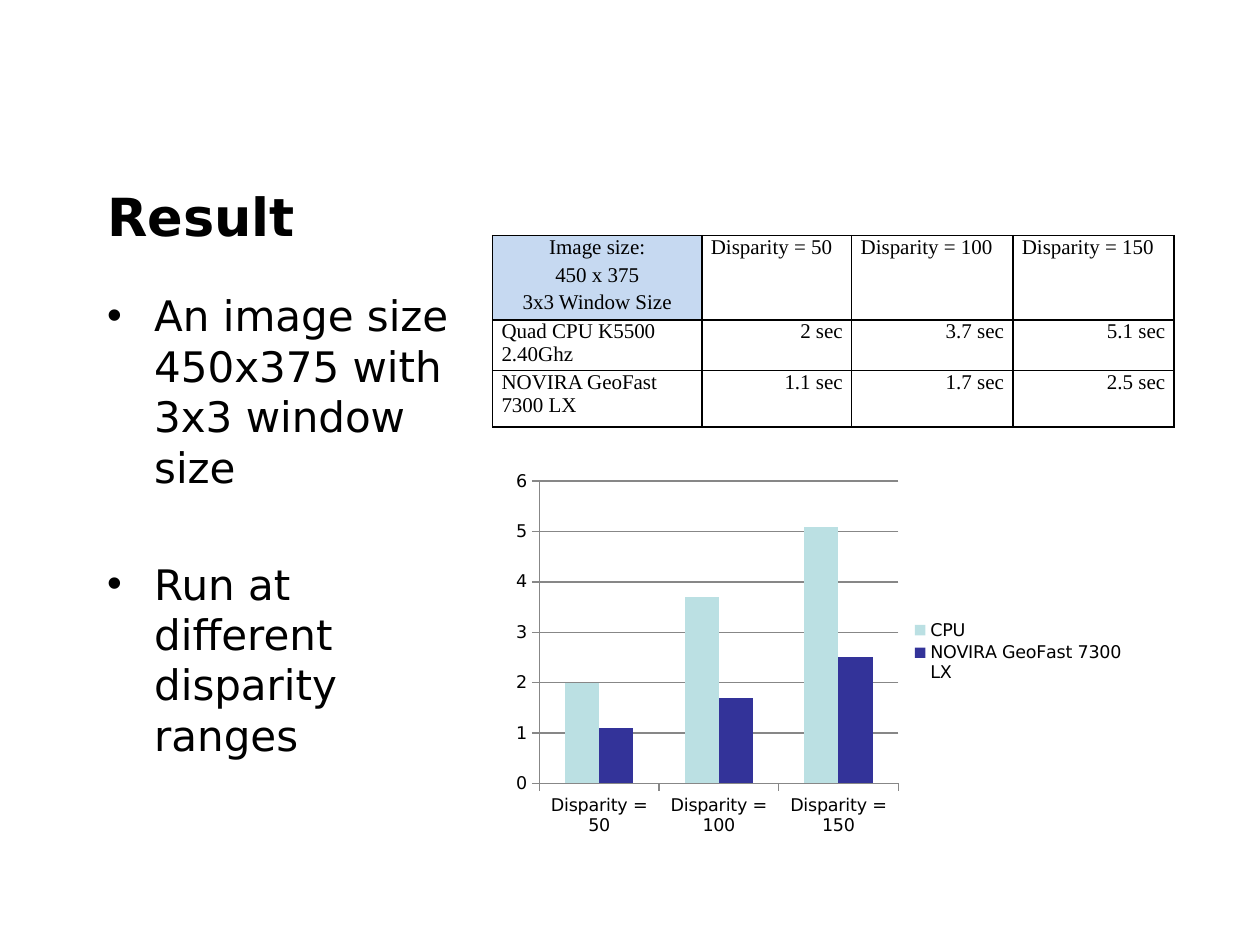
from lxml import etree
from pptx import Presentation
from pptx.chart.data import CategoryChartData
from pptx.dml.color import RGBColor
from pptx.enum.chart import XL_CHART_TYPE, XL_LEGEND_POSITION, XL_TICK_MARK
from pptx.enum.text import MSO_ANCHOR, MSO_AUTO_SIZE, PP_ALIGN
from pptx.oxml.ns import qn
from pptx.util import Cm, Pt

COLORS = {"text": "000000", "header": "C6D9F1", "grid": "878787",
          "cpu": "BBE0E3", "gpu": "333399"}
SANS = "DejaVu Sans"
SERIF = "Times New Roman"
GPU_NAME = "NOVIRA GeoFast 7300 LX"
DISPARITIES = ["Disparity = 50", "Disparity = 100", "Disparity = 150"]
HEADER_LINES = ["Image size:", "450 x 375", "3x3 Window Size"]
TIMINGS = {"Quad CPU K5500 2.40Ghz": [2, 3.7, 5.1], GPU_NAME: [1.1, 1.7, 2.5]}


def color(name):
    return RGBColor.from_string(COLORS[name])


def style_font(font, name, size, bold=False):
    font.name = name
    font.size = Pt(size)
    font.bold = bold
    font.color.rgb = color("text")


def add_run(paragraph, text, name, size, bold=False):
    run = paragraph.add_run()
    run.text = text
    style_font(run.font, name, size, bold)


def place_title(slide, left, top, width, height):
    title = slide.shapes.title
    title.left, title.top, title.width, title.height = left, top, width, height
    frame = title.text_frame
    frame.auto_size = MSO_AUTO_SIZE.NONE
    frame.vertical_anchor = MSO_ANCHOR.MIDDLE
    paragraph = frame.paragraphs[0]
    paragraph.alignment = PP_ALIGN.LEFT
    add_run(paragraph, "Result", SANS, 30, bold=True)


def add_bullets(slide, left, top, width, height):
    frame = slide.shapes.add_textbox(left, top, width, height).text_frame
    frame.word_wrap = True
    items = ["An image size 450x375 with 3x3 window size",
             "Run at different disparity ranges"]
    for index, item in enumerate(items):
        paragraph = frame.add_paragraph() if index else frame.paragraphs[0]
        properties = paragraph._p.get_or_add_pPr()
        properties.set("marL", str(Cm(0.95)))
        properties.set("indent", str(-Cm(0.95)))
        bullet_font = etree.SubElement(properties, qn("a:buFont"))
        bullet_font.set("typeface", "Arial")
        etree.SubElement(properties, qn("a:buChar")).set("char", "•")
        if index:
            paragraph.space_before = Pt(38)
        add_run(paragraph, item, SANS, 24)


def set_borders(cell, sides):
    """Draw black lines on the given sides of a cell and none on the others."""
    properties = cell._tc.get_or_add_tcPr()
    for side in "LRTB":
        line = etree.SubElement(properties, qn(f"a:ln{side}"), w=str(Pt(1)))
        if side in sides:
            fill = etree.SubElement(line, qn("a:solidFill"))
            etree.SubElement(fill, qn("a:srgbClr"), val=COLORS["text"])
        else:
            etree.SubElement(line, qn("a:noFill"))


def add_timing_table(slide, left, top, width, height):
    rows = [[line, "", "", ""] for line in HEADER_LINES]
    rows[0][1:] = DISPARITIES
    rows += [[name] + [f"{value} sec" for value in values]
             for name, values in TIMINGS.items()]
    header_count = len(HEADER_LINES)
    table = slide.shapes.add_table(len(rows), 4, left, top, width, height).table
    table.first_row = table.horz_banding = False
    for column, column_width in zip(table.columns, [4.22, 3.02, 3.25, 3.25]):
        column.width = Cm(column_width)
    for row, row_height in zip(table.rows, [0.56, 0.56, 0.58, 0.58, 1.14]):
        row.height = Cm(row_height)

    for r, texts in enumerate(rows):
        sides = "LR"
        if r == 0 or r >= header_count:
            sides += "T"
        if r >= header_count - 1:
            sides += "B"
        for c, text in enumerate(texts):
            cell = table.cell(r, c)
            set_borders(cell, sides)
            cell.margin_left = cell.margin_right = Cm(0.18)
            cell.margin_top = cell.margin_bottom = 0
            in_header = r < header_count
            if in_header and c == 0:
                cell.fill.solid()
                cell.fill.fore_color.rgb = color("header")
            else:
                cell.fill.background()
            paragraph = cell.text_frame.paragraphs[0]
            if in_header and c == 0:
                paragraph.alignment = PP_ALIGN.CENTER
            elif not in_header and c > 0:
                paragraph.alignment = PP_ALIGN.RIGHT
            if text:
                add_run(paragraph, text, SERIF, 12)
            else:
                etree.SubElement(paragraph._p, qn("a:endParaRPr"), sz="1200")
    for c in (1, 2):
        table.cell(0, c).merge(table.cell(header_count - 1, c))


def set_layout(parent, index, inner=False, **fractions):
    """Fix a chart part's place, in fractions of the chart's size."""
    for old_layout in parent.findall(qn("c:layout")):
        parent.remove(old_layout)
    layout = etree.Element(qn("c:layout"))
    parent.insert(index, layout)
    manual = etree.SubElement(layout, qn("c:manualLayout"))
    if inner:
        etree.SubElement(manual, qn("c:layoutTarget"), val="inner")
    for axis in "xy":
        etree.SubElement(manual, qn(f"c:{axis}Mode"), val="edge")
    for name, fraction in fractions.items():
        etree.SubElement(manual, qn(f"c:{name}"), val=str(fraction))


def add_timing_chart(slide, left, top, width, height):
    data = CategoryChartData()
    data.categories = DISPARITIES
    for name, values in zip(["CPU", GPU_NAME], TIMINGS.values()):
        data.add_series(name, values)
    chart = slide.shapes.add_chart(XL_CHART_TYPE.COLUMN_CLUSTERED,
                                   left, top, width, height, data).chart
    style_font(chart.font, SANS, 10)
    chart.has_title = False
    chart.has_legend = True
    chart.legend.position = XL_LEGEND_POSITION.RIGHT
    chart.legend.include_in_layout = False
    chart_element = chart._chartSpace.chart
    set_layout(chart_element.plotArea, 0, inner=True, x=0.06, y=0.05, w=0.57, h=0.8)
    set_layout(chart.legend._element, 1, x=0.65, y=0.41, w=0.34, h=0.18)

    plot = chart.plots[0]
    plot.gap_width = 150
    plot.overlap = 0
    plot.vary_by_categories = False
    for series, name in zip(plot.series, ["cpu", "gpu"]):
        series.format.fill.solid()
        series.format.fill.fore_color.rgb = color(name)

    value_axis = chart.value_axis
    value_axis.minimum_scale, value_axis.maximum_scale = 0, 6
    value_axis.major_unit = 1
    value_axis.has_major_gridlines = True
    for axis in (chart.category_axis, value_axis):
        axis.major_tick_mark = XL_TICK_MARK.OUTSIDE
        axis.format.line.color.rgb = color("grid")
    value_axis.major_gridlines.format.line.color.rgb = color("grid")


def main():
    presentation = Presentation()
    presentation.slide_width = Cm(25.4)
    presentation.slide_height = Cm(19.05)
    slide = presentation.slides.add_slide(presentation.slide_layouts[5])
    place_title(slide, Cm(1.91), Cm(3.38), Cm(21.59), Cm(1.91))
    add_bullets(slide, Cm(1.91), Cm(5.72), Cm(7.82), Cm(11.15))
    add_timing_table(slide, Cm(9.93), Cm(4.75), Cm(13.74), Cm(3.42))
    add_timing_chart(slide, Cm(10.11), Cm(9.32), Cm(12.7), Cm(7.62))
    presentation.save("out.pptx")


if __name__ == "__main__":
    main()
